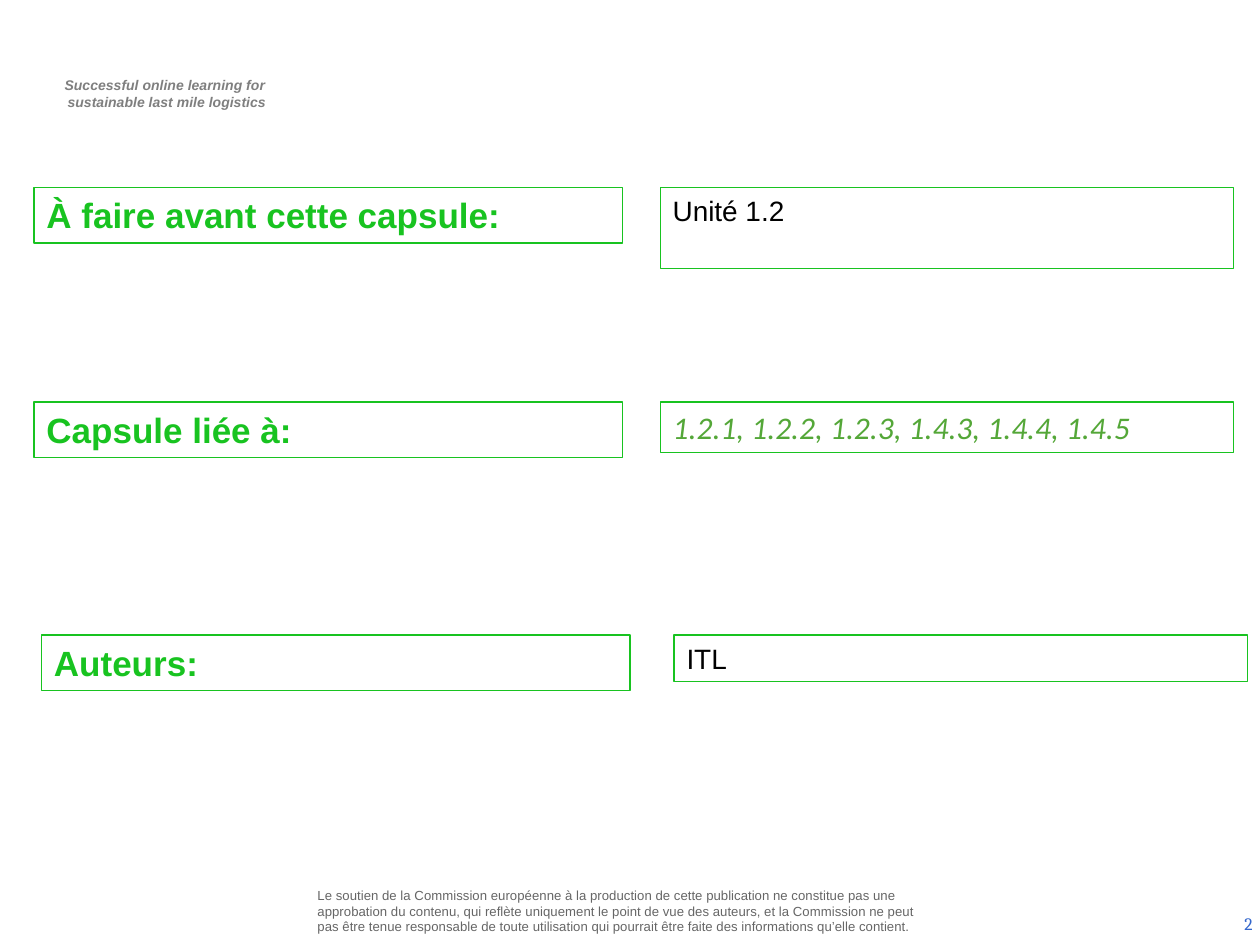
"""Build the capsule information slide: prerequisites, related capsules and authors."""
from pptx import Presentation
from pptx.dml.color import RGBColor
from pptx.enum.shapes import MSO_SHAPE
from pptx.enum.text import MSO_ANCHOR, PP_ALIGN
from pptx.util import Inches, Pt

RECTANGLE = MSO_SHAPE.RECTANGLE
TOP, MIDDLE = MSO_ANCHOR.TOP, MSO_ANCHOR.MIDDLE
LEFT, CENTER, RIGHT = PP_ALIGN.LEFT, PP_ALIGN.CENTER, PP_ALIGN.RIGHT
COLORS = {
    "paper": "FFFFFF", "green": "18C320", "leaf": "54A738", "black": "000000",
    "tagline": "7F7F7F", "notice": "666666", "number": "3366CC",
}
LABEL_WIDTH, LABEL_HEIGHT, VALUE_WIDTH = 4.67, 0.44, 4.55


class CapsuleSlide:
    """Hold the style and the slide being filled."""

    def __init__(self, slide):
        self.slide = slide

    def color(self, key):
        """Return the named colour."""
        return RGBColor.from_string(COLORS[key])

    def fill_text(self, frame, lines, size, color, font="Arial", bold=False, italic=False,
                  align=LEFT, anchor=TOP, insets=(0.1, 0.05), indent=0):
        """Fill a text frame with one paragraph for each line."""
        frame.word_wrap = True
        frame.vertical_anchor = anchor
        frame.margin_left = frame.margin_right = Inches(insets[0])
        frame.margin_top = frame.margin_bottom = Inches(insets[1])
        for index, line in enumerate(lines):
            paragraph = frame.add_paragraph() if index else frame.paragraphs[0]
            paragraph.alignment = align
            if indent:
                paragraph._p.get_or_add_pPr().set("marL", str(Inches(indent)))
            run = paragraph.add_run()
            run.text = line
            run.font.name, run.font.size = font, Pt(size)
            run.font.bold, run.font.italic = bold, italic
            run.font.color.rgb = self.color(color)

    def text(self, box, lines, **style):
        """Add a plain text box."""
        textbox = self.slide.shapes.add_textbox(*map(Inches, box))
        self.fill_text(textbox.text_frame, lines, **style)

    def panel(self, box, line, **style):
        """Add a white rectangle with a green outline."""
        panel = self.slide.shapes.add_shape(RECTANGLE, *map(Inches, box))
        panel.shadow.inherit = False
        panel.fill.solid()
        panel.fill.fore_color.rgb = self.color("paper")
        panel.line.color.rgb = self.color("green")
        panel.line.width = Pt(0.75)
        self.fill_text(panel.text_frame, [line], **style)

    def row(self, top, label_left, label, value_left, value_height, value, **style):
        """Add a label panel and its value panel side by side."""
        self.panel((label_left, top, LABEL_WIDTH, LABEL_HEIGHT), label,
                   size=20, color="green", bold=True)
        self.panel((value_left, top, VALUE_WIDTH, value_height), value, **style)


def main():
    """Create the deck and save it."""
    deck = Presentation()
    deck.slide_width, deck.slide_height = Inches(10), Inches(7.5)
    page = CapsuleSlide(deck.slides.add_slide(deck.slide_layouts[6]))

    page.text((0.29, 0.56, 2.03, 0.37),
              ["Successful online learning for ", "sustainable last mile logistics"],
              size=8, color="tagline", bold=True, italic=True, align=CENTER, indent=0.04)
    page.text((2.48, 7.03, 4.93, 0.4),
              ["Le soutien de la Commission européenne à la production de cette publication "
               "ne constitue pas une approbation du contenu, qui reflète uniquement le point "
               "de vue des auteurs, et la Commission ne peut pas être tenue responsable de "
               "toute utilisation qui pourrait être faite des informations qu’elle contient."],
              size=7.5, color="notice", anchor=MIDDLE, insets=(0.04, 0.04))
    page.text((7.71, 7.13, 2.33, 0.4), ["2"], size=10, color="number", font="Cambria",
              align=RIGHT, anchor=MIDDLE)

    plain = {"size": 16, "color": "black"}
    related = {"size": 18, "color": "leaf", "font": "Calibri", "italic": True}
    page.row(1.49, 0.27, "À faire avant cette capsule:", 5.24, 0.64, "Unité 1.2", **plain)
    page.row(3.19, 0.27, "Capsule liée à:", 5.24, 0.4,
             "1.2.1, 1.2.2, 1.2.3, 1.4.3, 1.4.4, 1.4.5", **related)
    page.row(5.04, 0.33, "Auteurs:", 5.35, 0.37, "ITL", **plain)

    deck.save("out.pptx")


if __name__ == "__main__":
    main()
